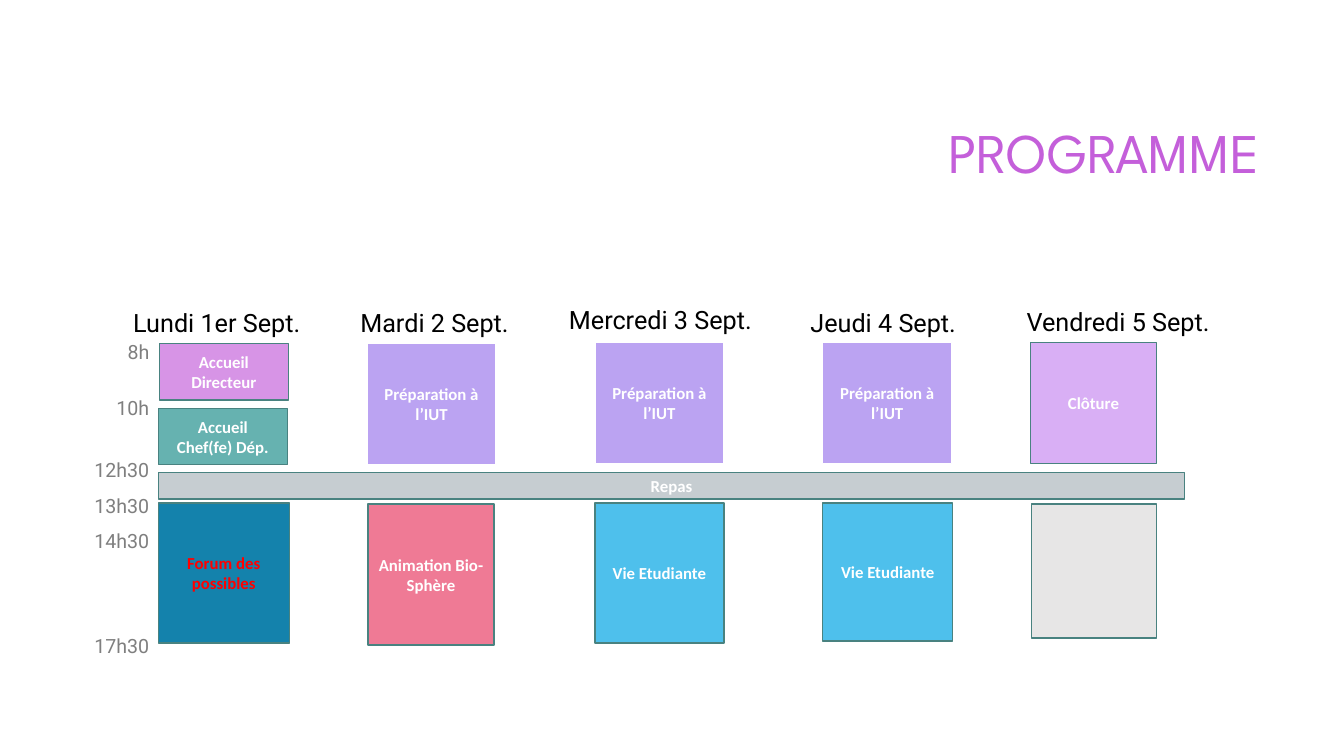
from pptx import Presentation
from pptx.dml.color import RGBColor
from pptx.enum.shapes import MSO_SHAPE
from pptx.enum.text import MSO_ANCHOR, PP_ALIGN
from pptx.util import Inches, Pt

COLORS = {
    "title": "C45FDA", "black": "000000", "grey": "7F7F7F", "white": "FFFFFF",
    "red": "FF0000", "border": "498280", "orchid": "D794E6", "teal": "66B2B0",
    "silver": "C6CDD1", "blue": "1482AC", "violet": "BBA3F2", "sky": "4EC0EC",
    "pink": "EF7A95", "lilac": "D9AFF5", "pale": "E7E6E6",
}

# Content: day name, centre and top of its heading
DAYS = [
    ("Lundi 1er Sept.", 2.15, 2.94),
    ("Mardi 2 Sept.", 4.31, 2.94),
    ("Mercredi 3 Sept.", 6.55, 2.91),
    ("Jeudi 4 Sept.", 8.76, 2.94),
    ("Vendredi 5 Sept.", 11.09, 2.93),
]

# Hour and top of its label
HOURS = [("8h", 3.2), ("10h", 3.75), ("12h30", 4.37),
         ("13h30", 4.72), ("14h30", 5.07), ("17h30", 6.11)]

# Text, (left, top, width, height), fill, border, text colour
SESSIONS = [
    ("Accueil Directeur", (1.58, 3.41, 1.28, 0.56), "orchid", "border", "white"),
    ("Accueil\nChef(fe) Dép.", (1.57, 4.05, 1.28, 0.56), "teal", "border", "white"),
    ("Repas", (1.57, 4.69, 10.18, 0.26), "silver", "border", "white"),
    ("Forum des possibles", (1.57, 4.99, 1.3, 1.39), "blue", "border", "red"),
    ("Préparation à l’IUT", (3.64, 3.41, 1.28, 1.2), "violet", "white", "white"),
    ("Préparation à l’IUT", (5.9, 3.4, 1.28, 1.2), "violet", "white", "white"),
    ("Préparation à l’IUT", (8.16, 3.4, 1.28, 1.2), "violet", "white", "white"),
    ("Animation Bio-Sphère", (3.65, 5, 1.25, 1.4), "pink", "border", "white"),
    ("Vie Etudiante", (5.9, 4.99, 1.28, 1.39), "sky", "border", "white"),
    ("Vie Etudiante", (8.16, 4.99, 1.29, 1.37), "sky", "border", "white"),
    ("Clôture", (10.22, 3.4, 1.25, 1.2), "lilac", "border", "white"),
    ("", (10.23, 5, 1.24, 1.33), "pale", "border", "white"),
]

# Formats
TITLE_FONT = {"name": "League Spartan", "size": Pt(40)}
DAY_FONT = {"name": "Roboto", "size": Pt(18)}
HOUR_FONT = {"name": "Roboto", "size": Pt(14)}
SESSION_FONT = {"name": "Calibri", "size": Pt(12), "bold": True}

HEADING_WIDTH, LABEL_WIDTH, LABEL_HEIGHT = 2.4, 0.8, 0.47
HOURS_RIGHT = 1.58


def color(name):
    return RGBColor.from_string(COLORS[name])


def write(shape, text, font, color_name, align, anchor, spacing=1.0):
    frame = shape.text_frame
    frame.word_wrap = True
    frame.vertical_anchor = anchor
    frame.text = text
    for paragraph in frame.paragraphs:
        paragraph.alignment = align
        paragraph.line_spacing = spacing
        for run in paragraph.runs:
            for attribute, value in font.items():
                setattr(run.font, attribute, value)
            run.font.color.rgb = color(color_name)


def add_label(slide, text, box, *text_format):
    shape = slide.shapes.add_textbox(*map(Inches, box))
    write(shape, text, *text_format)


def add_session(slide, text, box, fill, border, text_color):
    shape = slide.shapes.add_shape(MSO_SHAPE.RECTANGLE, *map(Inches, box))
    shape.shadow.inherit = False
    shape.fill.solid()
    shape.fill.fore_color.rgb = color(fill)
    shape.line.color.rgb = color(border)
    shape.line.width = Pt(1)
    if text:
        write(shape, text, SESSION_FONT, text_color, PP_ALIGN.CENTER, MSO_ANCHOR.MIDDLE)


def main():
    presentation = Presentation()
    presentation.slide_width = Inches(13.33)
    presentation.slide_height = Inches(7.5)
    slide = presentation.slides.add_slide(presentation.slide_layouts[6])

    # Title
    add_label(slide, "PROGRAMME", (3.17, 0.84, 9.42, 1.41), TITLE_FONT, "title",
              PP_ALIGN.RIGHT, MSO_ANCHOR.MIDDLE, 0.9)

    # Day headings, centred on their column
    for day, center, top in DAYS:
        box = (center - HEADING_WIDTH / 2, top, HEADING_WIDTH, LABEL_HEIGHT)
        add_label(slide, day, box, DAY_FONT, "black",
                  PP_ALIGN.CENTER, MSO_ANCHOR.TOP, Pt(26))

    # Hours, sharing one right edge
    for hour, top in HOURS:
        box = (HOURS_RIGHT - LABEL_WIDTH, top, LABEL_WIDTH, LABEL_HEIGHT)
        add_label(slide, hour, box, HOUR_FONT, "grey",
                  PP_ALIGN.RIGHT, MSO_ANCHOR.TOP, Pt(26))

    # Sessions of the week
    for session in SESSIONS:
        add_session(slide, *session)

    presentation.save("out.pptx")


if __name__ == "__main__":
    main()
